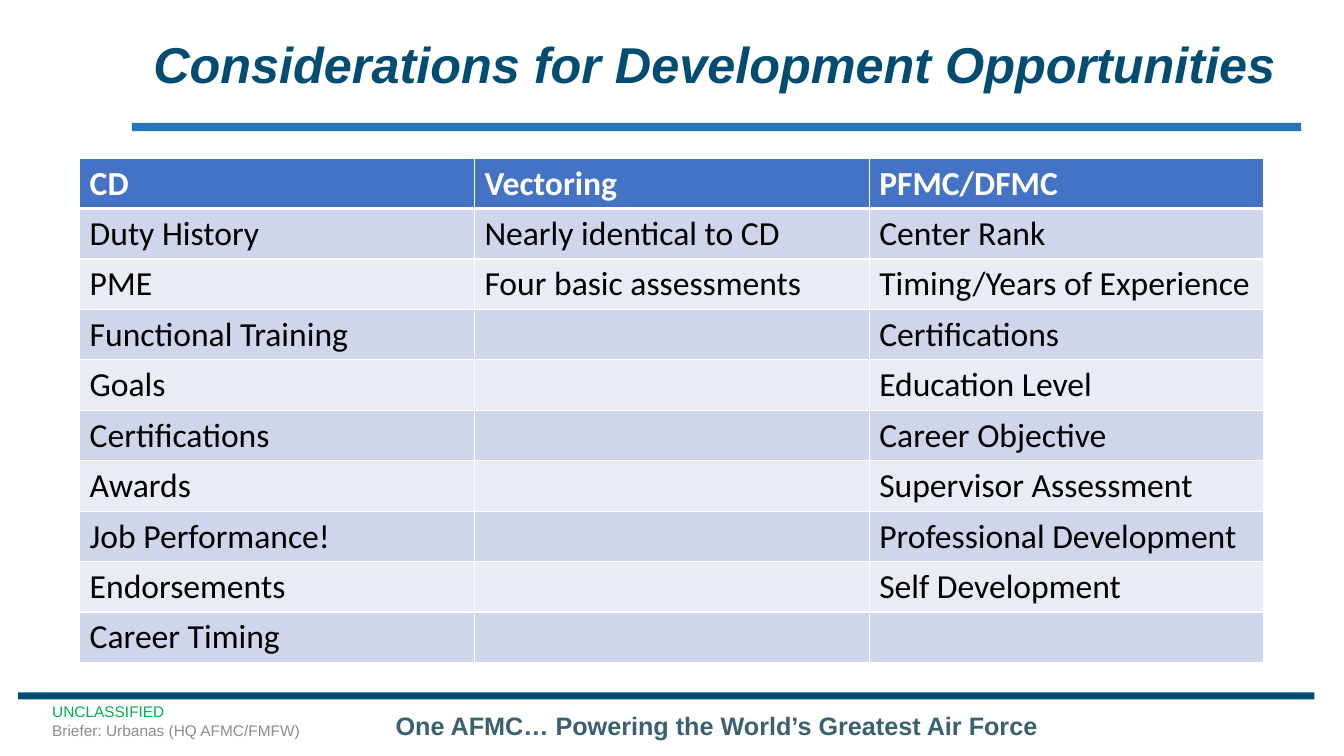
from dataclasses import dataclass

from lxml import etree
from pptx import Presentation
from pptx.dml.color import RGBColor
from pptx.enum import shapes as sh, text as tx
from pptx.oxml import ns
from pptx.util import Pt

WHITE = RGBColor(0xFF, 0xFF, 0xFF)
BLACK = RGBColor(0x00, 0x00, 0x00)
NAVY = RGBColor(0x00, 0x4D, 0x71)
BLUE = RGBColor(0x25, 0x74, 0xBC)
SLATE = RGBColor(0x3A, 0x60, 0x72)
GREEN = RGBColor(0x00, 0xB0, 0x50)
GRAY = RGBColor(0x8C, 0x8C, 0x8C)
HEADER = RGBColor(0x44, 0x72, 0xC4)
BANDS = (RGBColor(0xE9, 0xEB, 0xF5), RGBColor(0xCF, 0xD5, 0xEA))

CONSIDERATIONS = {
    "CD": ["Duty History", "PME", "Functional Training", "Goals", "Certifications",
           "Awards", "Job Performance!", "Endorsements", "Career Timing"],
    "Vectoring": ["Nearly identical to CD", "Four basic assessments"],
    "PFMC/DFMC": ["Center Rank", "Timing/Years of Experience", "Certifications",
                  "Education Level", "Career Objective", "Supervisor Assessment",
                  "Professional Development", "Self Development"],
}


@dataclass(frozen=True)
class Box:
    left: float
    top: float
    width: float
    height: float

    def points(self) -> tuple:
        return Pt(self.left), Pt(self.top), Pt(self.width), Pt(self.height)


@dataclass(frozen=True)
class Rule:
    box: Box
    color: RGBColor


@dataclass(frozen=True)
class Style:
    size: float
    color: RGBColor
    font: str = "Arial"
    bold: bool = False
    italic: bool = False


@dataclass(frozen=True)
class Caption:
    box: Box
    lines: tuple
    styles: tuple
    align: tx.PP_ALIGN
    anchor: tx.MSO_ANCHOR


RULES = (
    Rule(Box(13, 494.6, 925.9, 5), NAVY),
    Rule(Box(94.3, 87.8, 835.2, 5.8), BLUE),
)
CAPTIONS = (
    Caption(Box(189.4, 504, 645.1, 28.8),
            ("One AFMC… Powering the World’s Greatest Air Force",),
            (Style(18, SLATE, bold=True),), tx.PP_ALIGN.CENTER, tx.MSO_ANCHOR.TOP),
    Caption(Box(30.2, 500.4, 235.4, 28.8),
            ("UNCLASSIFIED", "Briefer: Urbanas (HQ AFMC/FMFW)"),
            (Style(11, GREEN), Style(11, GRAY)), tx.PP_ALIGN.LEFT, tx.MSO_ANCHOR.MIDDLE),
)


def style_paragraph(paragraph, style: Style) -> None:
    for run in paragraph.runs:
        run.font.name = style.font
        run.font.size = Pt(style.size)
        run.font.bold = style.bold
        run.font.italic = style.italic
        run.font.color.rgb = style.color


def draw_rule(slide, rule: Rule) -> None:
    bar = slide.shapes.add_shape(sh.MSO_SHAPE.RECTANGLE, *rule.box.points())
    bar.shadow.inherit = False
    bar.fill.solid()
    bar.fill.fore_color.rgb = rule.color
    bar.line.fill.background()


def draw_caption(slide, caption: Caption) -> None:
    frame = slide.shapes.add_textbox(*caption.box.points()).text_frame
    frame.word_wrap = True
    frame.vertical_anchor = caption.anchor
    frame.text = "\n".join(caption.lines)
    for paragraph, style in zip(frame.paragraphs, caption.styles):
        paragraph.alignment = caption.align
        style_paragraph(paragraph, style)


def draw_title(slide) -> None:
    title = slide.shapes.title
    title.left, title.top, title.width, title.height = Box(100.8, 10.8, 828, 74.2).points()
    frame = title.text_frame
    frame.text = "Considerations for Development Opportunities"
    frame.auto_size = tx.MSO_AUTO_SIZE.NONE
    frame.word_wrap = True
    frame.vertical_anchor = tx.MSO_ANCHOR.MIDDLE
    frame.margin_left = Pt(0)
    frame.margin_right = Pt(17.2)
    heading = frame.paragraphs[0]
    heading.alignment = tx.PP_ALIGN.RIGHT
    heading.line_spacing = 0.9
    style_paragraph(heading, Style(36, NAVY, bold=True, italic=True))


def border_cell(cell, widths: dict) -> None:
    properties = cell._tc.get_or_add_tcPr()
    for side, width in widths.items():
        line = etree.SubElement(properties, ns.qn(f"a:ln{side}"), w=str(Pt(width)))
        fill = etree.SubElement(line, ns.qn("a:solidFill"))
        etree.SubElement(fill, ns.qn("a:srgbClr"), val=str(WHITE))


def draw_considerations(slide) -> None:
    row_count = 1 + max(map(len, CONSIDERATIONS.values()))
    area = Box(56.9, 112.9, 846, 34.6 * row_count)
    table = slide.shapes.add_table(row_count, len(CONSIDERATIONS), *area.points()).table
    for column, (heading, entries) in enumerate(CONSIDERATIONS.items()):
        for row in range(row_count):
            is_header = row == 0
            cell = table.cell(row, column)
            border_cell(cell, {"L": 1, "R": 1, "T": 3 if row == 1 else 1,
                               "B": 3 if is_header else 1})
            cell.fill.solid()
            cell.fill.fore_color.rgb = HEADER if is_header else BANDS[row % 2]
            if row <= len(entries):
                cell.text_frame.text = heading if is_header else entries[row - 1]
                style_paragraph(cell.text_frame.paragraphs[0],
                                Style(24, WHITE if is_header else BLACK, "Calibri", is_header))


def main() -> None:
    deck = Presentation()
    deck.slide_width, deck.slide_height = Pt(960), Pt(540)
    slide = deck.slides.add_slide(deck.slide_layouts[5])
    for rule in RULES:
        draw_rule(slide, rule)
    draw_title(slide)
    for caption in CAPTIONS:
        draw_caption(slide, caption)
    draw_considerations(slide)
    deck.save("out.pptx")


if __name__ == "__main__":
    main()
